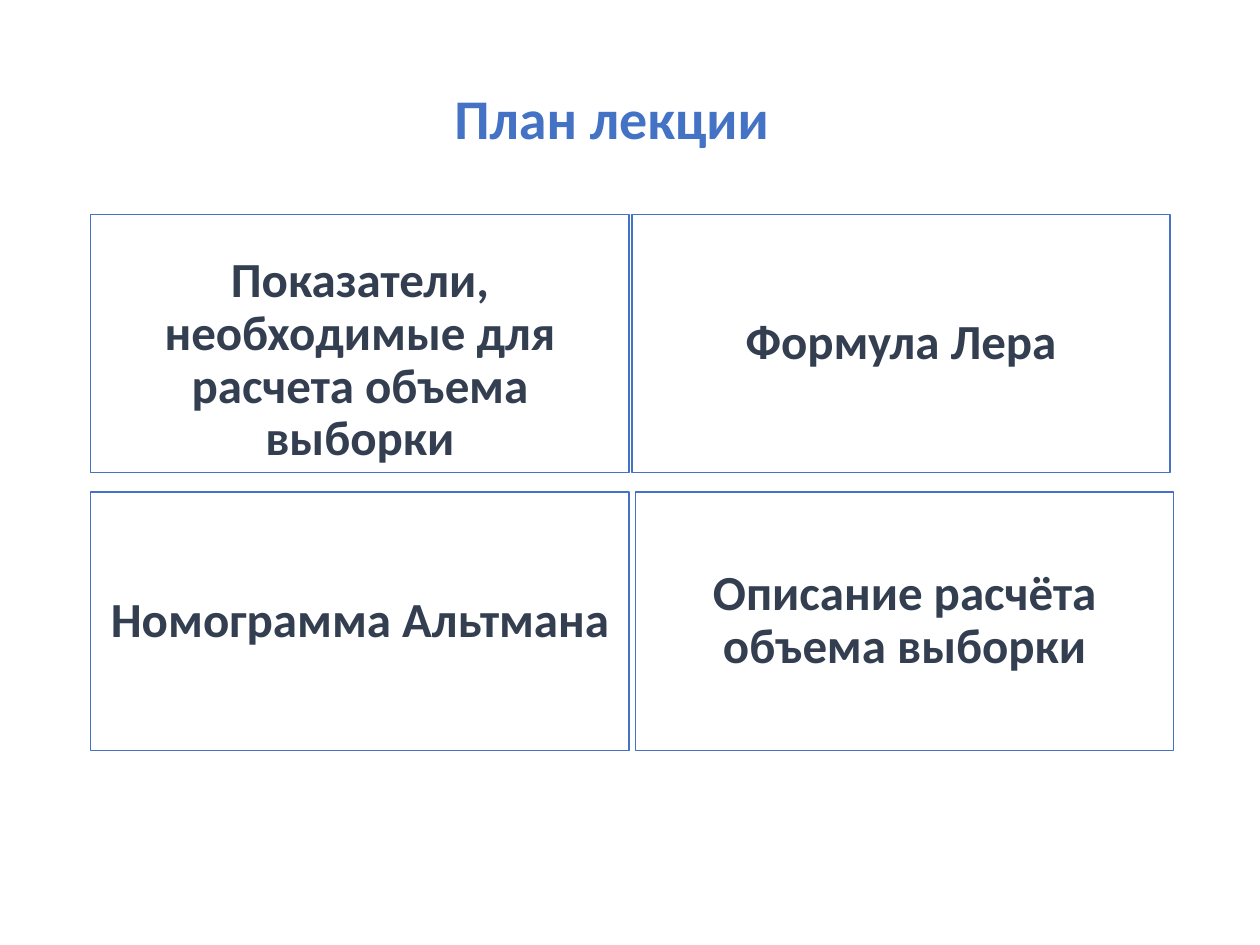
"""Build the lecture plan slide: a heading above four topic boxes."""
from dataclasses import dataclass

from pptx import Presentation
from pptx.dml.color import RGBColor
from pptx.enum import shapes, text
from pptx.util import Cm, Pt


@dataclass(frozen=True)
class Theme:
    """Colours, font and sizes of the slide."""
    font: str = "Calibri"
    accent: RGBColor = RGBColor(0x44, 0x72, 0xC4)
    dark: RGBColor = RGBColor(0x33, 0x3F, 0x50)
    title_size: int = 32
    topic_size: int = 28
    line_width: float = 0.75


THEME = Theme()
BOX_WIDTH, BOX_HEIGHT = Cm(10.85), Cm(5.21)
LEFT, RIGHT_TOP, RIGHT_BOTTOM = Cm(1.83), Cm(12.74), Cm(12.81)
TOP, BOTTOM = Cm(4.32), Cm(9.92)
MIDDLE = text.MSO_ANCHOR.MIDDLE
TOPICS = [
    ("Показатели, необходимые для расчета объема выборки", LEFT, TOP, text.MSO_ANCHOR.BOTTOM),
    ("Формула Лера", RIGHT_TOP, TOP, MIDDLE),
    ("Номограмма Альтмана", LEFT, BOTTOM, MIDDLE),
    ("Описание расчёта объема выборки", RIGHT_BOTTOM, BOTTOM, MIDDLE),
]


def write_text(shape, words, *, size, color, anchor, spacing=None):
    """Write one bold centred paragraph into a shape."""
    frame = shape.text_frame
    frame.word_wrap = True
    frame.vertical_anchor = anchor
    paragraph = frame.paragraphs[0]
    paragraph.alignment = text.PP_ALIGN.CENTER
    paragraph.line_spacing = spacing
    run = paragraph.add_run()
    run.text = words
    run.font.name = THEME.font
    run.font.size = Pt(size)
    run.font.bold = True
    run.font.color.rgb = color


def add_title(slide, words):
    """Add the slide heading."""
    shape = slide.shapes.add_textbox(Cm(6.91), Cm(1.55), BOX_WIDTH, Cm(1.62))
    write_text(shape, words, size=THEME.title_size, color=THEME.accent,
               anchor=text.MSO_ANCHOR.TOP)
    shape.text_frame.auto_size = text.MSO_AUTO_SIZE.SHAPE_TO_FIT_TEXT


def add_topic(slide, words, left, top, anchor):
    """Add one outlined topic box."""
    shape = slide.shapes.add_shape(shapes.MSO_SHAPE.RECTANGLE, left, top, BOX_WIDTH, BOX_HEIGHT)
    shape.shadow.inherit = False
    shape.fill.background()
    shape.line.color.rgb = THEME.accent
    shape.line.width = Pt(THEME.line_width)
    write_text(shape, words, size=THEME.topic_size, color=THEME.dark,
               anchor=anchor, spacing=0.9)


def main():
    """Build and save the presentation."""
    presentation = Presentation()
    presentation.slide_width, presentation.slide_height = Cm(25.4), Cm(19.05)
    slide = presentation.slides.add_slide(presentation.slide_layouts[6])
    add_title(slide, "План лекции")
    for topic in TOPICS:
        add_topic(slide, *topic)
    presentation.save("out.pptx")


if __name__ == "__main__":
    main()
